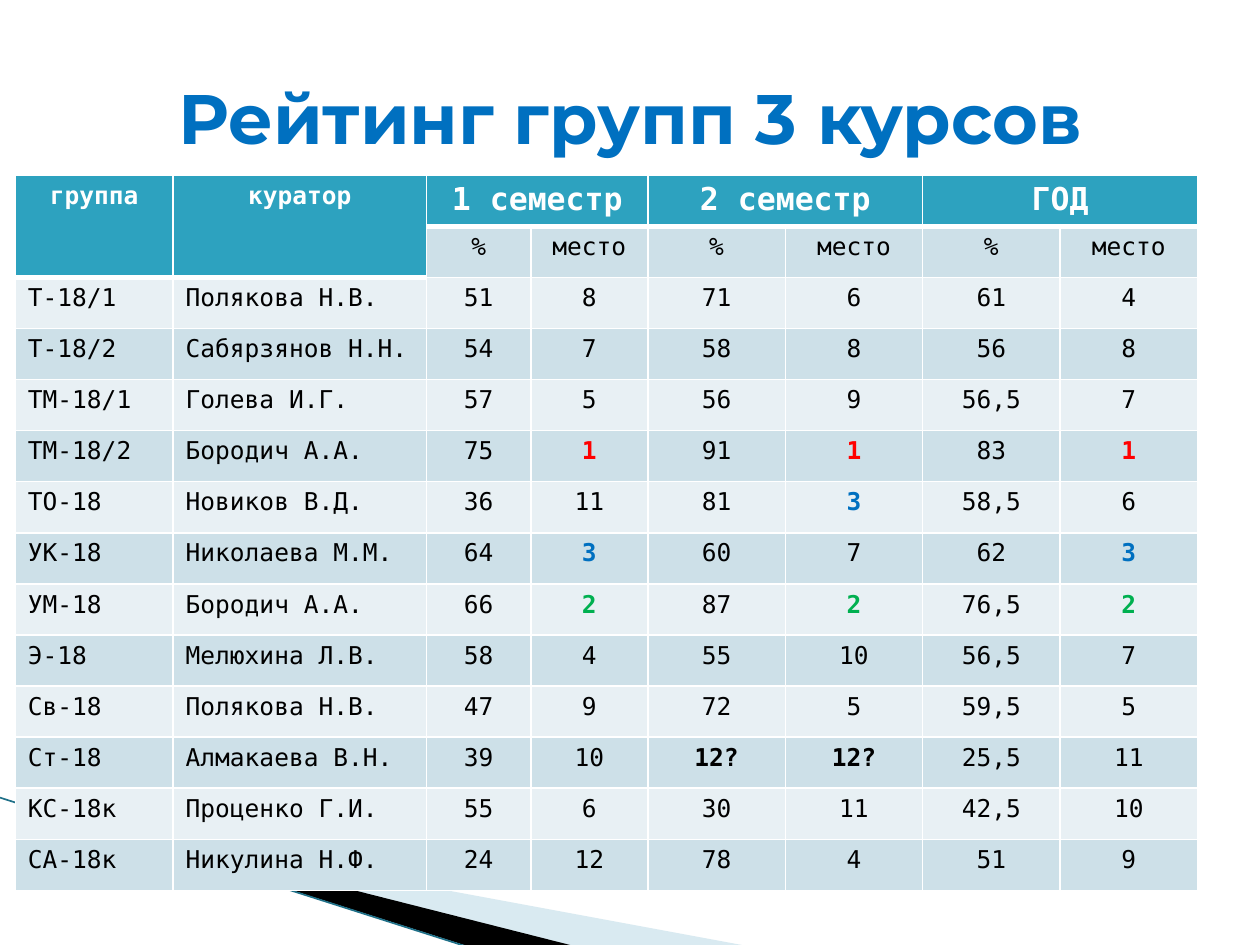
from lxml.etree import SubElement
from pptx import Presentation
from pptx.dml.color import RGBColor
from pptx.enum.shapes import MSO_CONNECTOR as Connector
from pptx.enum.text import MSO_ANCHOR as Anchor, PP_ALIGN as Align
from pptx.oxml.ns import qn
from pptx.util import Cm, Pt

COLORS = {
    "title": "0070C0", "header": "2DA2BF", "white": "FFFFFF", "text": "000000",
    "dark_band": "CDE0E8", "light_band": "E8F0F4",
    "pale_wave": "A0CBDC", "black_wave": "000000", "wave_line": "1F7088",
}
PLACE_COLORS = {"1": "FF0000", "2": "00B050", "3": "0070C0"}
MONO = "DejaVu Sans Mono"

COLUMN_WIDTHS = [3.18, 5.11, 2.1, 2.36, 2.77, 2.77, 2.77, 2.77]
ROW_HEIGHT = 1.03
PLACE_COLUMNS = (3, 5, 7)
HEADER = ["группа", "куратор", "1 семестр", "", "2 семестр", "", "ГОД", ""]
SUBHEADER = ["", ""] + ["%", "место"] * 3
GROUPS = [
    ["Т-18/1", "Полякова Н.В.", "51", "8", "71", "6", "61", "4"],
    ["Т-18/2", "Сабярзянов Н.Н.", "54", "7", "58", "8", "56", "8"],
    ["ТМ-18/1", "Голева И.Г.", "57", "5", "56", "9", "56,5", "7"],
    ["ТМ-18/2", "Бородич А.А.", "75", "1", "91", "1", "83", "1"],
    ["ТО-18", "Новиков В.Д.", "36", "11", "81", "3", "58,5", "6"],
    ["УК-18", "Николаева М.М.", "64", "3", "60", "7", "62", "3"],
    ["УМ-18", "Бородич А.А.", "66", "2", "87", "2", "76,5", "2"],
    ["Э-18", "Мелюхина Л.В.", "58", "4", "55", "10", "56,5", "7"],
    ["Св-18", "Полякова Н.В.", "47", "9", "72", "5", "59,5", "5"],
    ["Ст-18", "Алмакаева В.Н.", "39", "10", "12?", "12?", "25,5", "11"],
    ["КС-18к", "Проценко Г.И.", "55", "6", "30", "11", "42,5", "10"],
    ["СА-18к", "Никулина Н.Ф.", "24", "12", "78", "4", "51", "9"],
]


def rgb(value):
    return RGBColor.from_string(value)


def write(frame, text, *, size=14, font=MONO, color=COLORS["text"], bold=False,
          align=Align.CENTER):
    paragraph = frame.paragraphs[0]
    paragraph.alignment = align
    run = paragraph.add_run()
    run.text = text
    run.font.size = Pt(size)
    run.font.name = font
    run.font.bold = bold
    run.font.color.rgb = rgb(color)


def reframe(shape, left, top, width, height):
    """Give the outline a new frame while its points stay in place."""
    shift_x, shift_y = shape.left - left, shape.top - top
    shape.left, shape.top, shape.width, shape.height = left, top, width, height
    outline = shape.element.spPr.find(".//" + qn("a:path"))
    outline.set("w", str(width))
    outline.set("h", str(height))
    for point in outline.iter(qn("a:pt")):
        point.set("x", str(int(point.get("x")) + shift_x))
        point.set("y", str(int(point.get("y")) + shift_y))


def add_wave(slide, left, top, frame, points, color, opacity=None):
    corners = [(Cm(left + x), Cm(top + y)) for x, y in points]
    builder = slide.shapes.build_freeform(*corners[0])
    builder.add_line_segments(corners[1:], close=True)
    wave = builder.convert_to_shape()
    x, y, width, height = frame
    reframe(wave, Cm(left + x), Cm(top + y), Cm(width), Cm(height))
    wave.shadow.inherit = False
    wave.fill.solid()
    wave.fill.fore_color.rgb = rgb(color)
    wave.line.fill.background()
    if opacity:
        tint = wave.element.spPr.find(".//" + qn("a:srgbClr"))
        SubElement(tint, qn("a:alpha"), val=str(opacity * 1000))


def add_waves(slide, left, top):
    """Decoration in the lower left corner."""
    add_wave(slide, left, top, (1.98, -2.19, 10.57, 4.01),
             [(1.4, 0.46), (15.11, 3), (11.58, 3), (1.4, 0.43)],
             COLORS["pale_wave"], opacity=40)
    add_wave(slide, left, top, (-0.15, 0, 10.57, 2.34),
             [(1.35, 0.4), (11.61, 3), (9.45, 3), (1.37, 0.43)],
             COLORS["black_wave"])
    edge = slide.shapes.add_connector(
        Connector.STRAIGHT, Cm(left), Cm(top), Cm(left + 9.4), Cm(top + 3))
    edge.line.width = Pt(0.95)
    edge.line.color.rgb = rgb(COLORS["wave_line"])
    SubElement(edge.element.spPr, qn("a:effectLst"))


def set_borders(cell, bottom):
    properties = cell._tc.get_or_add_tcPr()
    for side, width in (("L", 1), ("R", 1), ("T", 1), ("B", bottom)):
        border = SubElement(properties, qn(f"a:ln{side}"), w=str(Pt(width)))
        fill = SubElement(border, qn("a:solidFill"))
        SubElement(fill, qn("a:srgbClr"), val=COLORS["white"])


def cell_format(row, column, text):
    if row == 0:
        return {"size": 14 if column < 2 else 18, "color": COLORS["white"], "bold": True}
    if column < 2:
        return {"align": Align.LEFT}
    if column in PLACE_COLUMNS and text in PLACE_COLORS:
        return {"color": PLACE_COLORS[text], "bold": True}
    return {"bold": text.endswith("?")}


def add_rating_table(slide, left, top):
    rows = [HEADER, SUBHEADER] + GROUPS
    rating = slide.shapes.add_table(
        len(rows), len(COLUMN_WIDTHS), Cm(left), Cm(top),
        Cm(sum(COLUMN_WIDTHS)), Cm(ROW_HEIGHT * len(rows))).table
    for column, width in zip(rating.columns, COLUMN_WIDTHS):
        column.width = Cm(width)
    for row, values in enumerate(rows):
        rating.rows[row].height = Cm(ROW_HEIGHT)
        band = COLORS["dark_band" if row % 2 else "light_band"]
        for column, text in enumerate(values):
            cell = rating.cell(row, column)
            set_borders(cell, bottom=1 if row else 3)
            is_header = row == 0 or (row == 1 and column < 2)
            cell.fill.solid()
            cell.fill.fore_color.rgb = rgb(COLORS["header"] if is_header else band)
            if text:
                write(cell.text_frame, text, **cell_format(row, column, text))
    # Header spans: two tall cells, then one wide cell per period
    for column in (0, 1):
        rating.cell(0, column).merge(rating.cell(1, column))
    for column in (2, 4, 6):
        rating.cell(0, column).merge(rating.cell(0, column + 1))


def place_title(slide, left, top, width, height):
    title = slide.shapes.title
    title.left, title.top, title.width, title.height = map(Cm, (left, top, width, height))
    title.text_frame.vertical_anchor = Anchor.MIDDLE
    write(title.text_frame, "Рейтинг групп 3 курсов", size=40, font="Montserrat",
          color=COLORS["title"], bold=True)
    # Keep the title in front of the table
    title.element.getparent().append(title.element)


def main():
    deck = Presentation()
    deck.slide_width, deck.slide_height = Cm(25.4), Cm(19.05)
    slide = deck.slides.add_slide(deck.slide_layouts[5])
    add_waves(slide, 0, 16.08)
    add_rating_table(slide, 0.31, 3.53)
    place_title(slide, 1.27, 0.76, 22.86, 3.18)
    deck.save("out.pptx")


if __name__ == "__main__":
    main()
